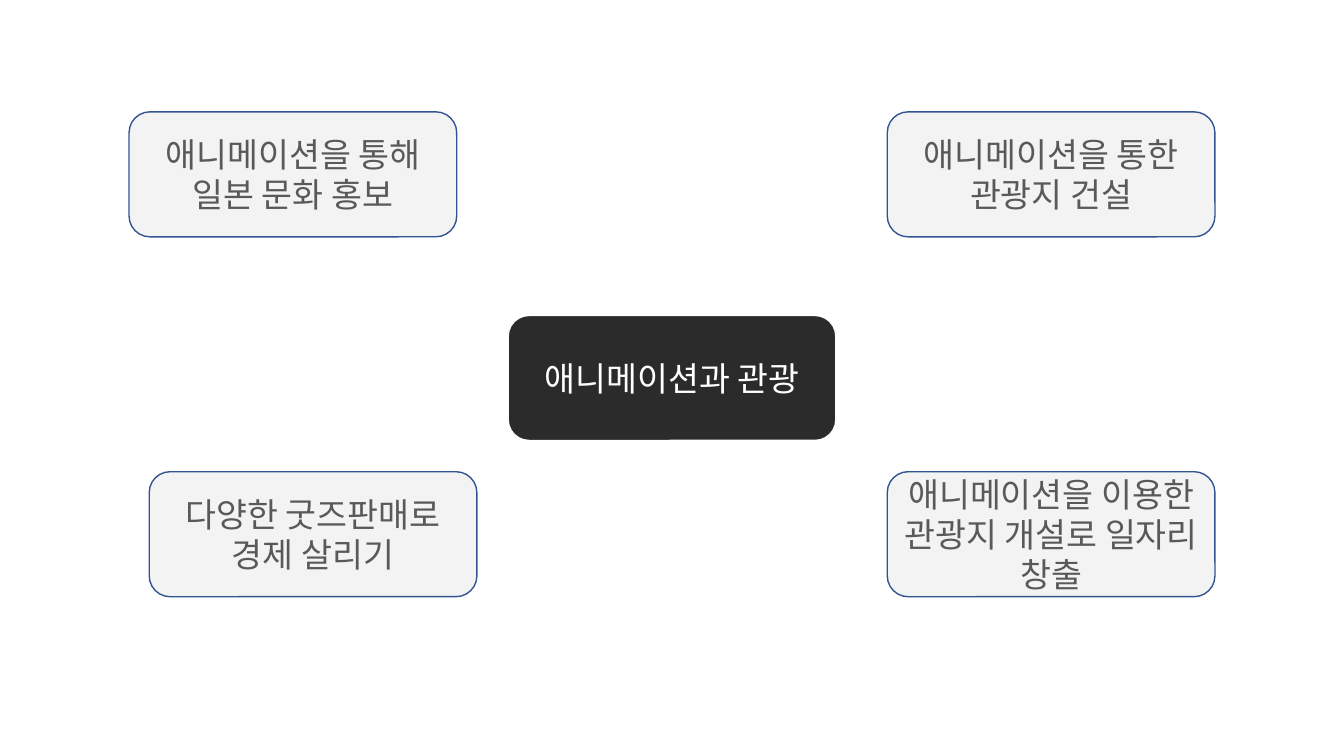
import pptx
import pptx.util
import pptx.dml.color
import pptx.enum.shapes
import pptx.enum.text
import pptx.oxml.ns
from lxml import etree

RGB = pptx.dml.color.RGBColor
BLACK = RGB(0x00, 0x00, 0x00)
WHITE = RGB(0xFF, 0xFF, 0xFF)
PALE = RGB(0xF2, 0xF2, 0xF2)
BLUE = RGB(0x32, 0x54, 0x91)
GRAY = RGB(0x59, 0x59, 0x59)
FONT = "Noto Sans CJK KR"

# Slide and box sizes in inches
WIDE, HIGH = 13.33, 7.5
BOX_W, BOX_H = 3.25, 1.24

# Grid of the outer boxes
LEFT, INDENT, RIGHT = 1.28, 1.48, 8.8
TOP, LOW = 1.11, 4.68

IDEAS = [
    (LEFT, TOP, "애니메이션을 통해 일본 문화 홍보"),
    (RIGHT, TOP, "애니메이션을 통한 관광지 건설"),
    (INDENT, LOW, "다양한 굿즈판매로 경제 살리기"),
    (RIGHT, LOW, "애니메이션을 이용한 관광지 개설로 일자리 창출"),
]


def add_tag(parent, tag, **attrs):
    return etree.SubElement(parent, pptx.oxml.ns.qn(tag), **attrs)


def paint(box, color, alpha):
    """Fill the box with a colour of the given opacity in percent."""
    box.fill.solid()
    box.fill.fore_color.rgb = color
    tone = box._element.spPr.find(".//" + pptx.oxml.ns.qn("a:srgbClr"))
    add_tag(tone, "a:alpha", val=str(alpha * 1000))


def write(box, text, color):
    """Put centred text in the box."""
    frame = box.text_frame
    frame.word_wrap = True
    frame.vertical_anchor = pptx.enum.text.MSO_ANCHOR.MIDDLE
    para = frame.paragraphs[0]
    para.text = text
    para.alignment = pptx.enum.text.PP_ALIGN.CENTER
    para.font.size = pptx.util.Pt(24)
    para.font.name = FONT
    para.font.color.rgb = color
    # Korean letters take the East Asian font
    props = para._p.pPr.find(pptx.oxml.ns.qn("a:defRPr"))
    add_tag(props, "a:ea", typeface=FONT)


def add_box(slide, left, top, text, fill, alpha, edge, ink):
    box = slide.shapes.add_shape(
        pptx.enum.shapes.MSO_SHAPE.ROUNDED_RECTANGLE,
        *(pptx.util.Inches(size) for size in (left, top, BOX_W, BOX_H)))
    box.shadow.inherit = False
    paint(box, fill, alpha)
    box.line.color.rgb = edge
    box.line.width = pptx.util.Pt(1)
    write(box, text, ink)


def main():
    deck = pptx.Presentation()
    deck.slide_width = pptx.util.Inches(WIDE)
    deck.slide_height = pptx.util.Inches(HIGH)
    slide = deck.slides.add_slide(deck.slide_layouts[6])

    # Central topic
    add_box(slide, (WIDE - BOX_W) / 2, (HIGH - BOX_H) / 2,
            "애니메이션과 관광", BLACK, 83, WHITE, WHITE)

    # Ideas around it
    for left, top, text in IDEAS:
        add_box(slide, left, top, text, PALE, 86, BLUE, GRAY)

    deck.save("out.pptx")


if __name__ == "__main__":
    main()
